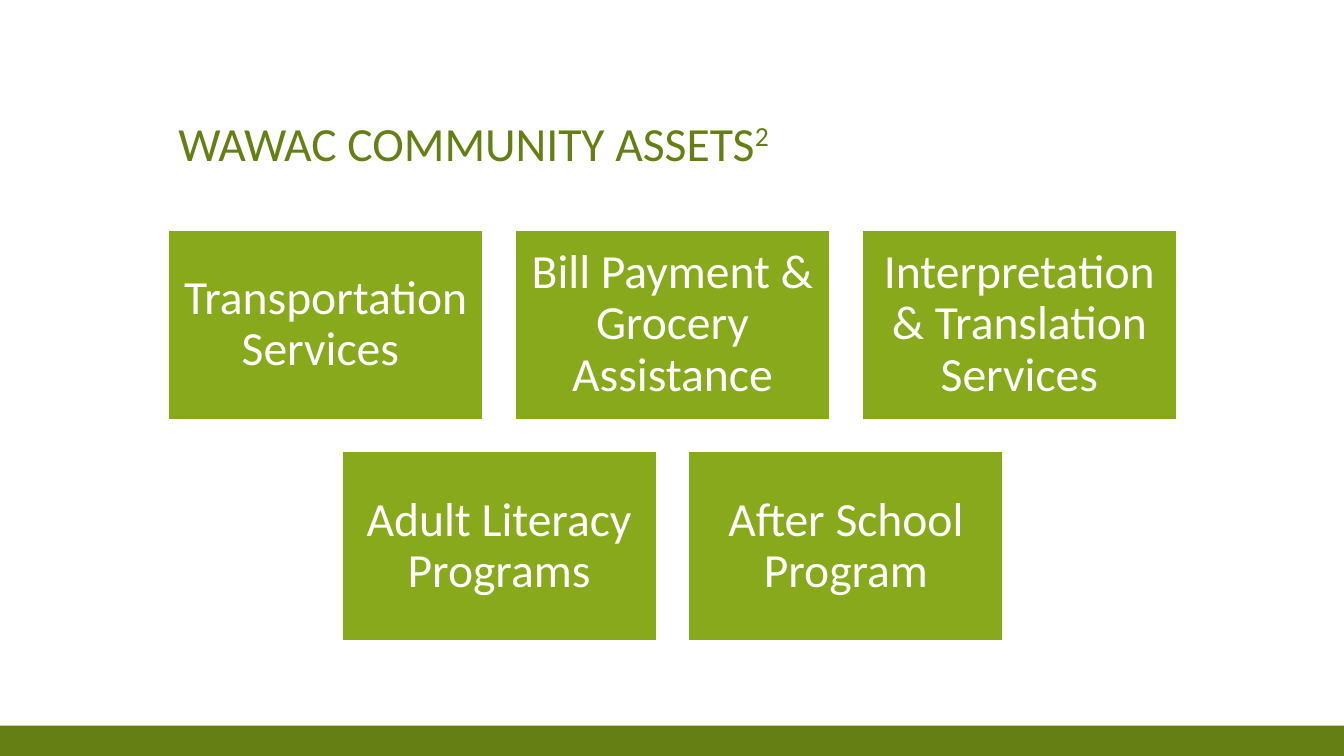
from pptx import Presentation
from pptx.dml.color import RGBColor
from pptx.enum.shapes import MSO_SHAPE
from pptx.enum.text import MSO_ANCHOR, PP_ALIGN
from pptx.util import Inches, Pt

COLORS = {"dark_green": "657F14", "green": "87A91B", "white": "FFFFFF"}
SLIDE_WIDTH, SLIDE_HEIGHT = 13.33, 7.5
FOOTER_HEIGHT = 0.3
CARD_WIDTH, CARD_HEIGHT, CARD_GAP = 3.12, 1.88, 0.32

ASSET_ROWS = [
    [
        "Transportation Services ",
        "Bill Payment & Grocery Assistance",
        "Interpretation & Translation Services",
    ],
    ["Adult Literacy Programs", "After School Program"],
]
CARD_FRAME = {
    "word_wrap": True,
    "vertical_anchor": MSO_ANCHOR.MIDDLE,
    **{f"margin_{side}": Inches(0.14) for side in ("left", "top", "right", "bottom")},
}
TITLE_FRAME = {"word_wrap": True, "vertical_anchor": MSO_ANCHOR.BOTTOM}
FONT = {"name": "Calibri", "size": Pt(34)}


def color(name):
    return RGBColor.from_string(COLORS[name])


def apply_format(target, values):
    for attribute, value in values.items():
        setattr(target, attribute, value)


def add_run(paragraph, text, color_name):
    run = paragraph.add_run()
    run.text = text
    apply_format(run.font, FONT)
    run.font.color.rgb = color(color_name)
    return run


def add_block(slide, box, fill):
    """Add a plain filled rectangle without a shadow."""
    block = slide.shapes.add_shape(MSO_SHAPE.RECTANGLE, *map(Inches, box))
    block.shadow.inherit = False
    block.fill.solid()
    block.fill.fore_color.rgb = color(fill)
    block.line.fill.background()
    return block


def add_title(slide, box):
    """Add the heading with its superscript reference number."""
    frame = slide.shapes.add_textbox(*map(Inches, box)).text_frame
    apply_format(frame, TITLE_FRAME)
    heading = frame.paragraphs[0]
    heading.line_spacing = 0.9
    add_run(heading, "WAWAC COMMUNITY ASSETS", "dark_green")
    reference = add_run(heading, "2", "dark_green")
    reference._r.get_or_add_rPr().set("baseline", "30000")


def add_card(slide, box, asset):
    card = add_block(slide, box, "green")
    card.line.color.rgb = color("white")
    card.line.width = Pt(1)
    apply_format(card.text_frame, CARD_FRAME)
    label = card.text_frame.paragraphs[0]
    apply_format(label, {"alignment": PP_ALIGN.CENTER, "line_spacing": 0.9})
    add_run(label, asset, "white")


def add_asset_grid(slide, box):
    """Lay out the assets in rows, each centred in the box."""
    left, top, width, _ = box
    for row, assets in enumerate(ASSET_ROWS):
        row_width = len(assets) * (CARD_WIDTH + CARD_GAP) - CARD_GAP
        row_left = left + (width - row_width) / 2
        card_top = top + row * (CARD_HEIGHT + CARD_GAP)
        for column, asset in enumerate(assets):
            card_left = row_left + column * (CARD_WIDTH + CARD_GAP)
            add_card(slide, (card_left, card_top, CARD_WIDTH, CARD_HEIGHT), asset)


def main():
    presentation = Presentation()
    presentation.slide_width = Inches(SLIDE_WIDTH)
    presentation.slide_height = Inches(SLIDE_HEIGHT)
    slide = presentation.slides.add_slide(presentation.slide_layouts[6])
    footer_top = SLIDE_HEIGHT - FOOTER_HEIGHT
    add_block(slide, (0, footer_top, SLIDE_WIDTH, FOOTER_HEIGHT), "dark_green")
    add_title(slide, (1.67, 0.5, 10, 1.25))
    add_asset_grid(slide, (1.67, 2.28, 10, 4.08))
    presentation.save("out.pptx")


if __name__ == "__main__":
    main()
